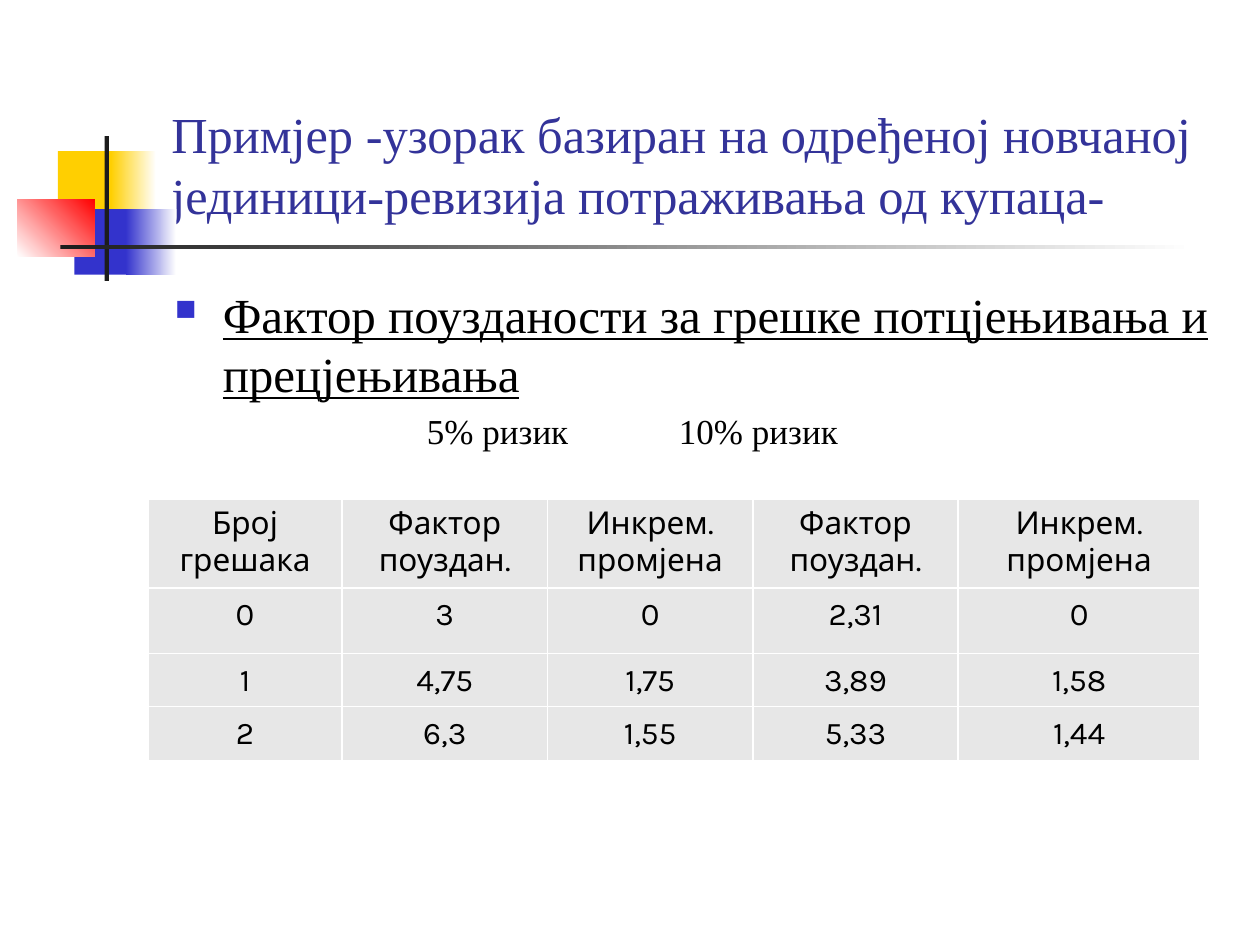
from dataclasses import dataclass
from typing import Optional

from lxml import etree
from pptx import Presentation
from pptx.dml.color import RGBColor
from pptx.enum.shapes import MSO_SHAPE
from pptx.enum.text import MSO_ANCHOR, PP_ALIGN
from pptx.oxml.ns import qn
from pptx.util import Inches, Pt

RECTANGLE = MSO_SHAPE.RECTANGLE
BOTTOM, TOP = MSO_ANCHOR.BOTTOM, MSO_ANCHOR.TOP
LEFT, CENTER = PP_ALIGN.LEFT, PP_ALIGN.CENTER

WHITE = RGBColor(0xFF, 0xFF, 0xFF)
BLACK = RGBColor(0, 0, 0)
YELLOW = RGBColor(0xFF, 0xCF, 0x01)
BLUE = RGBColor(0x33, 0x33, 0xCC)
RED = RGBColor(0xFF, 0, 0)
CHARCOAL = RGBColor(0x1C, 0x1C, 0x1C)
TITLE_BLUE = RGBColor(0x33, 0x33, 0x99)
CELL_GRAY = RGBColor(0xE7, 0xE7, 0xE7)

SERIF, SANS = "Times New Roman", "Karla"

# The slide is a grid of 100 columns by 75 rows
COLUMNS, ROWS = 100, 75
UNIT = Inches(0.1)


def units(count: float) -> int:
    return round(count * UNIT)


@dataclass(frozen=True)
class Box:
    column: float
    row: float
    width: float
    height: float

    def lengths(self) -> tuple:
        return tuple(map(units, (self.column, self.row, self.width, self.height)))


@dataclass(frozen=True)
class Block:
    box: Box
    start: RGBColor
    end: Optional[RGBColor] = None
    angle: float = 0


BLOCKS = [
    Block(Box(4.6, 12, 4.8, 5.2), YELLOW),
    Block(Box(8.8, 12, 3.6, 5.2), YELLOW, WHITE),
    Block(Box(5.9, 16.6, 4.6, 5.2), BLUE),
    Block(Box(10, 16.6, 4, 5.2), BLUE, WHITE),
    Block(Box(1.4, 15.8, 6.1, 4.6), WHITE, RED, 45),
    Block(Box(8.3, 10.8, 0.35, 11.5), CHARCOAL),
    Block(Box(4.8, 19.45, 90, 0.35), CHARCOAL, WHITE),
]
TITLE_BOX = Box(12.6, 2.3, 85.2, 16)
BODY_BOX = Box(12.9, 22.1, 85, 45)
TABLE_BOX = Box(11.75, 39.65, 83.5, 18.7)

TITLE = "Примјер -узорак базиран на одређеној новчаној јединици-ревизија потраживања од купаца-"
HEADING = "Фактор поузданости за грешке потцјењивања и прецјењивања"
RISKS = "5% ризик\t\t10% ризик"
FACTOR, CHANGE = "Фактор поуздан.", "Инкрем.\nпромјена"
TABLE_ROWS = [
    ["Број грешака", FACTOR, CHANGE, FACTOR, CHANGE],
    ["0", "3", "0", "2,31", "0"],
    ["1", "4,75", "1,75", "3,89", "1,58"],
    ["2", "6,3", "1,55", "5,33", "1,44"],
]
COLUMN_WIDTHS = [15.4, 16.3, 16.3, 16.3, 19.2]
ROW_HEIGHTS = [5, 5.2, 4.2, 4.3]

TITLE_FONT = {"name": SERIF, "size": Pt(28.8), "bold": False}
HEADING_FONT = {"name": SERIF, "size": Pt(28), "underline": True}
RISK_FONT = {"name": SERIF, "size": Pt(20)}
CELL_FONT = {"name": SANS, "size": Pt(18), "bold": False}
HEADER_FORMAT = {"alignment": CENTER}
VALUE_FORMAT = {"alignment": CENTER, "line_spacing": 1.07, "space_after": Pt(8)}


def apply(target, values: dict) -> None:
    for name, value in values.items():
        setattr(target, name, value)


def format_font(font, values: dict, color: RGBColor) -> None:
    apply(font, values)
    font.color.rgb = color


def draw_block(slide, block: Block) -> None:
    shape = slide.shapes.add_shape(RECTANGLE, *block.box.lengths())
    shape.shadow.inherit = False
    shape.line.fill.background()
    if block.end is None:
        shape.fill.solid()
        shape.fill.fore_color.rgb = block.start
        return
    shape.fill.gradient()
    shape.fill.gradient_angle = block.angle
    for stop, color in zip(shape.fill.gradient_stops, (block.start, block.end)):
        stop.color.rgb = color


def draw_title(slide) -> None:
    title = slide.shapes.title
    apply(title, dict(zip(("left", "top", "width", "height"), TITLE_BOX.lengths())))
    frame = title.text_frame
    frame.text = TITLE
    apply(frame, {"vertical_anchor": BOTTOM, "word_wrap": True})
    para = frame.paragraphs[0]
    para.alignment = LEFT
    format_font(para.runs[0].font, TITLE_FONT, TITLE_BLUE)


def add_bullet(para, indent: int) -> None:
    properties = para._p.get_or_add_pPr()
    properties.set("marL", str(indent))
    properties.set("indent", str(-indent))
    color = etree.SubElement(properties, qn("a:buClr"))
    etree.SubElement(color, qn("a:srgbClr"), val=str(BLUE))
    etree.SubElement(properties, qn("a:buSzPct"), val="60000")
    etree.SubElement(properties, qn("a:buChar"), char="■")


def draw_body(slide) -> None:
    frame = slide.shapes.add_textbox(*BODY_BOX.lengths()).text_frame
    apply(frame, {"word_wrap": True, "vertical_anchor": TOP})
    heading = frame.paragraphs[0]
    add_bullet(heading, units(3.8))
    risks = frame.add_paragraph()
    risks.space_before = Pt(4)
    risks._p.get_or_add_pPr().set("marL", str(units(20)))
    for para, text, font in ((heading, HEADING, HEADING_FONT), (risks, RISKS, RISK_FONT)):
        span = para.add_run()
        span.text = text
        format_font(span.font, font, BLACK)


def add_borders(cell) -> None:
    properties = cell._tc.get_or_add_tcPr()
    for position, side in enumerate(("a:lnL", "a:lnR", "a:lnT", "a:lnB")):
        line = etree.Element(qn(side), w=str(Pt(1)))
        fill = etree.SubElement(line, qn("a:solidFill"))
        etree.SubElement(fill, qn("a:srgbClr"), val=str(WHITE))
        properties.insert(position, line)


def draw_cell(cell, text: str, paragraph_format: dict) -> None:
    cell.fill.solid()
    cell.fill.fore_color.rgb = CELL_GRAY
    add_borders(cell)
    cell.text = text
    for para in cell.text_frame.paragraphs:
        apply(para, paragraph_format)
        format_font(para.runs[0].font, CELL_FONT, BLACK)


def draw_table(slide) -> None:
    table = slide.shapes.add_table(
        len(TABLE_ROWS), len(COLUMN_WIDTHS), *TABLE_BOX.lengths()).table
    for column, width in zip(table.columns, COLUMN_WIDTHS):
        column.width = units(width)
    for index, (row, height) in enumerate(zip(table.rows, ROW_HEIGHTS)):
        row.height = units(height)
        paragraph_format = VALUE_FORMAT if index else HEADER_FORMAT
        for cell, text in zip(row.cells, TABLE_ROWS[index]):
            draw_cell(cell, text, paragraph_format)


def main() -> None:
    deck = Presentation()
    deck.slide_width, deck.slide_height = units(COLUMNS), units(ROWS)
    page = deck.slides.add_slide(deck.slide_layouts[5])
    # Corner ornament and rule
    for block in BLOCKS:
        draw_block(page, block)
    # Text and table
    draw_title(page)
    draw_body(page)
    draw_table(page)
    deck.save("out.pptx")


if __name__ == "__main__":
    main()
